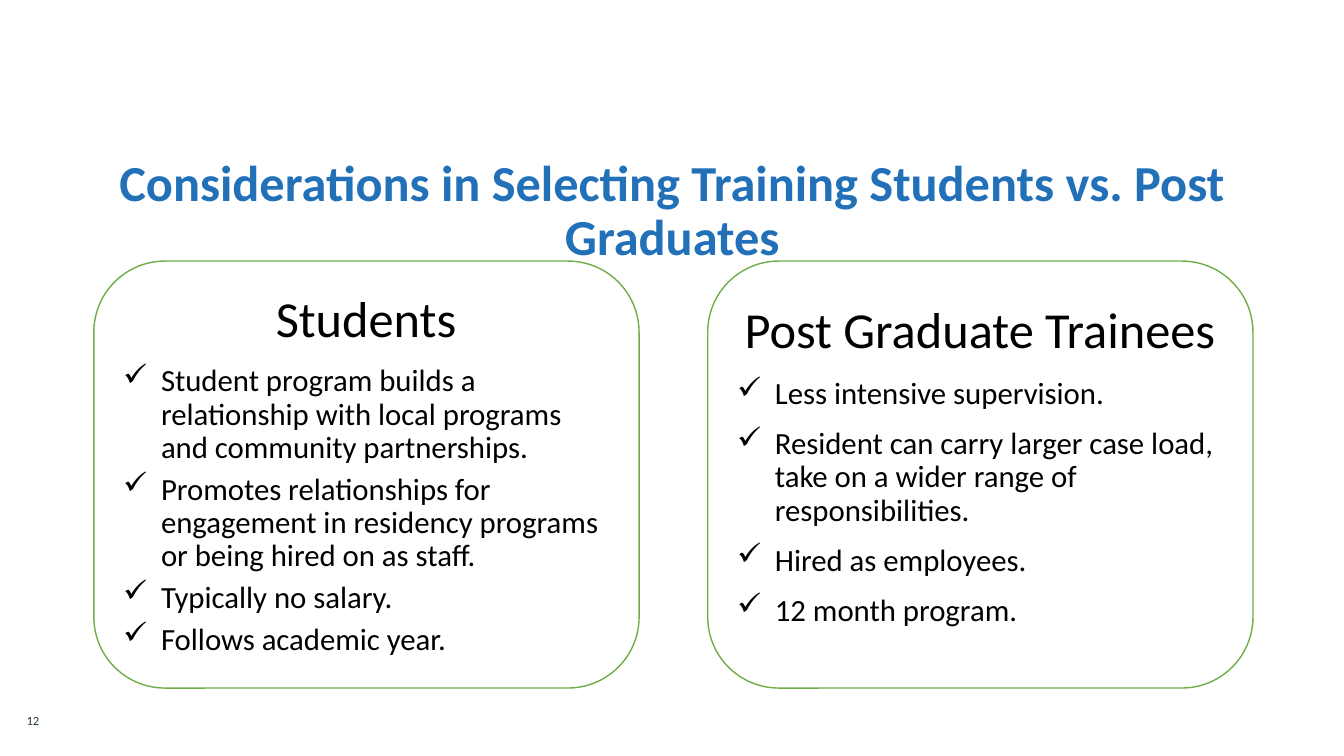
from pptx import Presentation
from pptx.dml.color import RGBColor
from pptx.enum.shapes import MSO_SHAPE as SHAPE
from pptx.enum.text import MSO_ANCHOR as ANCHOR, PP_ALIGN as ALIGN
from pptx.oxml.ns import qn
from pptx.util import Pt
from lxml import etree

BLUE = RGBColor(0x22, 0x70, 0xB7)
NAVY = RGBColor(0x1B, 0x37, 0x49)
GREEN = RGBColor(0x70, 0xAD, 0x47)
BLACK = RGBColor(0, 0, 0)
WHITE = RGBColor(0xFF, 0xFF, 0xFF)
HANGING = Pt(27)

# card left, heading, heading top, list top, list height, space after, points
CARDS = [
    (67, "Students", 201.6, 259, 216, 6, [
        "Student program builds a relationship with local programs and community partnerships.",
        "Promotes relationships for engagement in residency programs or being hired on as staff.",
        "Typically no salary.",
        "Follows academic year.",
    ]),
    (505.5, "Post Graduate Trainees", 209.5, 268, 185, 12, [
        "Less intensive supervision.",
        "Resident can carry larger case load, take on a wider range of responsibilities.",
        "Hired as employees.",
        "12 month program.",
    ]),
]


def add_text_frame(left, top, width, height, anchor=ANCHOR.TOP):
    tf = s.shapes.add_textbox(Pt(left), Pt(top), Pt(width), Pt(height)).text_frame
    tf.word_wrap = True
    tf.vertical_anchor = anchor
    return tf


def add_run(p, text, size, color, bold=False):
    r = p.add_run()
    r.text = text
    r.font.name = "Calibri"
    r.font.size = Pt(size)
    r.font.bold = bold
    r.font.color.rgb = color


prs = Presentation()
prs.slide_width, prs.slide_height = Pt(960), Pt(540)
s = prs.slides.add_slide(prs.slide_layouts[6])

p = add_text_frame(18, 99.4, 924.5, 104.4, ANCHOR.MIDDLE).paragraphs[0]
p.alignment = ALIGN.CENTER
p.line_spacing = 0.9
add_run(p, "Considerations in Selecting Training Students vs. Post Graduates", 36, BLUE, True)

p = add_text_frame(11.5, 505.4, 24, 18, ANCHOR.BOTTOM).paragraphs[0]
p.alignment = ALIGN.CENTER
add_run(p, "12", 9, NAVY)

for left, heading, heading_top, list_top, list_height, gap, points in CARDS:
    card = s.shapes.add_shape(SHAPE.ROUNDED_RECTANGLE, Pt(left), Pt(186.5), Pt(389.5), Pt(305))
    card.shadow.inherit = False
    card.fill.solid()
    card.fill.fore_color.rgb = WHITE
    card.line.color.rgb = GREEN
    card.line.width = Pt(1)

    tf = add_text_frame(left + 16.5, heading_top, 356, 51)
    tf.word_wrap = False
    p = tf.paragraphs[0]
    p.alignment = ALIGN.CENTER
    add_run(p, heading, 36, BLACK)

    tf = add_text_frame(left + 18, list_top, 352, list_height)
    tf.margin_left = tf.margin_right = Pt(3)
    tf.margin_top = tf.margin_bottom = Pt(2)
    for i, point in enumerate(points):
        p = tf.add_paragraph() if i else tf.paragraphs[0]
        p.line_spacing = 0.9
        p.space_after = Pt(gap)
        pPr = p._p.get_or_add_pPr()
        pPr.set("marL", str(HANGING))
        pPr.set("indent", str(-HANGING))
        etree.SubElement(pPr, qn("a:buChar"), char="✓")
        add_run(p, point, 22, BLACK)

prs.save("out.pptx")
